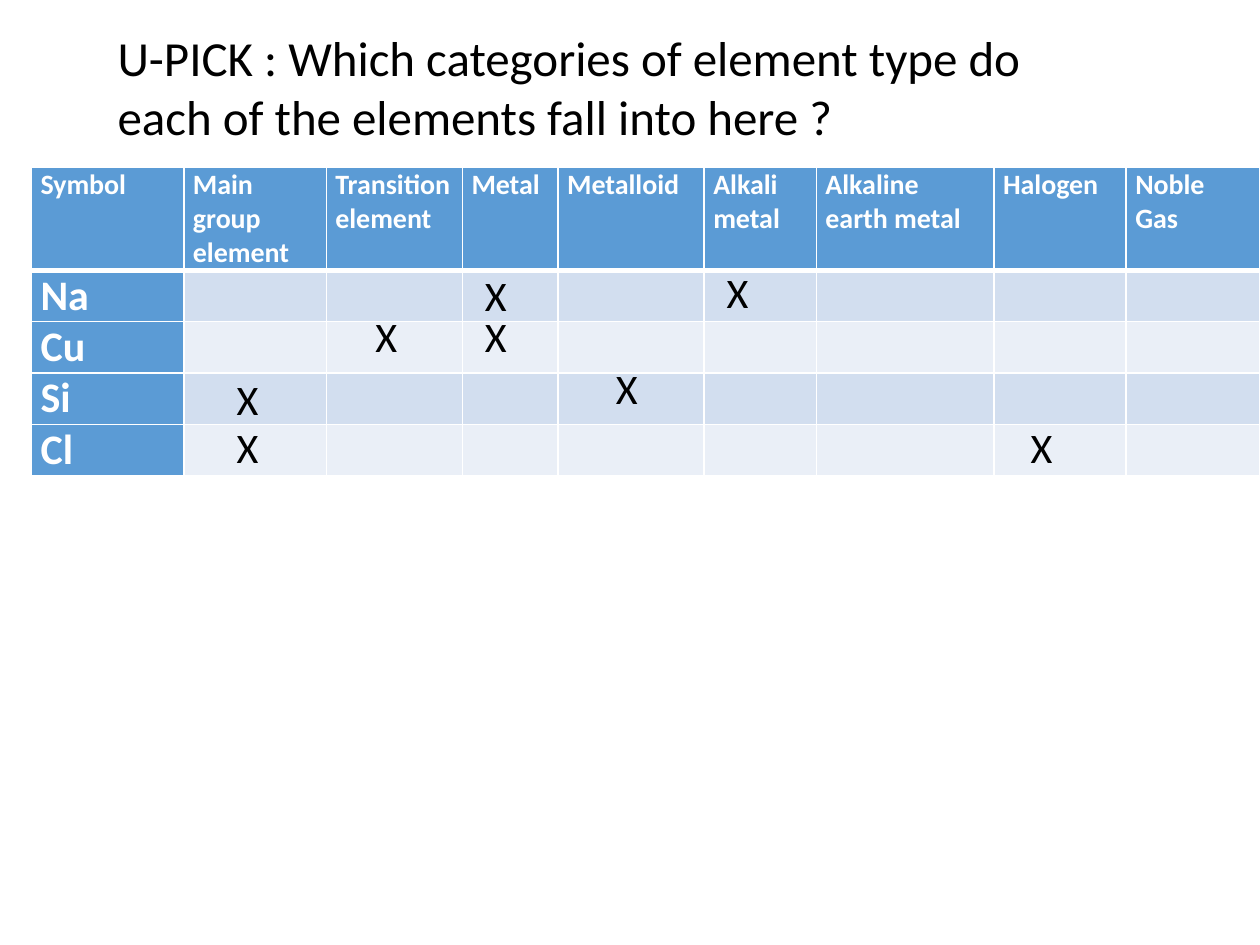
from lxml import etree
from pptx import Presentation
from pptx.dml.color import RGBColor
from pptx.enum import text
from pptx.oxml import ns
from pptx.util import Pt

# Content
TITLE = "U-PICK : Which categories of element type do each of the elements fall into here ?"
COLUMNS = [  # heading, width
    ("Symbol", 87.1), ("Main group element", 81.4), ("Transition element", 77.8),
    ("Metal", 54.7), ("Metalloid", 83.5), ("Alkali metal", 64.1),
    ("Alkaline earth metal", 101.5), ("Halogen", 75.6), ("Noble Gas", 76.3),
]
SYMBOLS = ["Na", "Cu", "Si", "Cl"]
MARKS = [  # left, top of each hand-placed X
    (128.2, 237.6), (408.2, 149), (207.4, 174.2), (270, 174.2),
    (128.2, 210.2), (344.9, 203.8), (270, 150.5), (581.8, 237.6),
]

# Style
FONT = "Calibri"
BLUE, BANDS, WHITE, BLACK = "5B9BD5", ("D2DEEF", "EAEFF7"), "FFFFFF", "000000"
TABLE_LEFT, TABLE_TOP, HEADER_HEIGHT, ROW_HEIGHT = 18, 95.8, 57.6, 28.8
MARK_SIZE = 36


def color(hex_text):
    return RGBColor.from_string(hex_text)


def style(para, size, hex_text, bold=False):
    para.font.name = FONT
    para.font.size = Pt(size)
    para.font.bold = bold
    para.font.color.rgb = color(hex_text)


def add_borders(cell, bottom):
    """Draw white borders; they must precede the cell's fill in the XML."""
    props = cell._tc.get_or_add_tcPr()
    widths = {"lnL": 1, "lnR": 1, "lnT": 1, "lnB": bottom}
    for index, (tag, width) in enumerate(widths.items()):
        line = etree.Element(ns.qn("a:" + tag), w=str(Pt(width)))
        fill = etree.SubElement(line, ns.qn("a:solidFill"))
        etree.SubElement(fill, ns.qn("a:srgbClr"), val=WHITE)
        props.insert(index, line)


def fill_cell(cell, words, size, fill, bottom):
    cell.margin_left = cell.margin_right = Pt(5.2)
    cell.margin_top = cell.margin_bottom = 0
    cell.fill.solid()
    cell.fill.fore_color.rgb = color(fill)
    cell.text = words
    style(cell.text_frame.paragraphs[0], size, WHITE, bold=True)
    add_borders(cell, bottom)


deck = Presentation()
deck.slide_width, deck.slide_height = Pt(720), Pt(540)
page = deck.slides.add_slide(deck.slide_layouts[5])

# Title
title = page.shapes.title
title.left, title.top, title.width, title.height = Pt(60), Pt(12.2), Pt(558), Pt(75)
frame = title.text_frame
frame.text = TITLE
frame.word_wrap = True
frame.auto_size = text.MSO_AUTO_SIZE.NONE
frame.vertical_anchor = text.MSO_ANCHOR.TOP
frame.paragraphs[0].alignment = text.PP_ALIGN.LEFT
style(frame.paragraphs[0], 28, BLACK)

# Table
heights = [HEADER_HEIGHT] + [ROW_HEIGHT] * len(SYMBOLS)
table = page.shapes.add_table(
    len(heights), len(COLUMNS), Pt(TABLE_LEFT), Pt(TABLE_TOP),
    Pt(sum(width for _, width in COLUMNS)), Pt(sum(heights))).table
for row, height in zip(table.rows, heights):
    row.height = Pt(height)
for c, (heading, width) in enumerate(COLUMNS):
    table.columns[c].width = Pt(width)
    fill_cell(table.cell(0, c), heading, 16, BLUE, bottom=3)
    for r, symbol in enumerate(SYMBOLS):
        words, fill = (symbol, BLUE) if c == 0 else ("", BANDS[r % 2])
        fill_cell(table.cell(r + 1, c), words, 24 if c == 0 else 18, fill, bottom=1)
for c in range(len(COLUMNS)):  # shared edge under the header
    edge = table.cell(1, c)._tc.tcPr.find(ns.qn("a:lnT"))
    edge.set("w", str(Pt(3)))

# Marks
for left, top in MARKS:
    box = page.shapes.add_textbox(Pt(left), Pt(top), Pt(MARK_SIZE), Pt(MARK_SIZE))
    box.text_frame.word_wrap = True
    box.text_frame.text = "X"
    style(box.text_frame.paragraphs[0], 24, BLACK)

deck.save("out.pptx")
